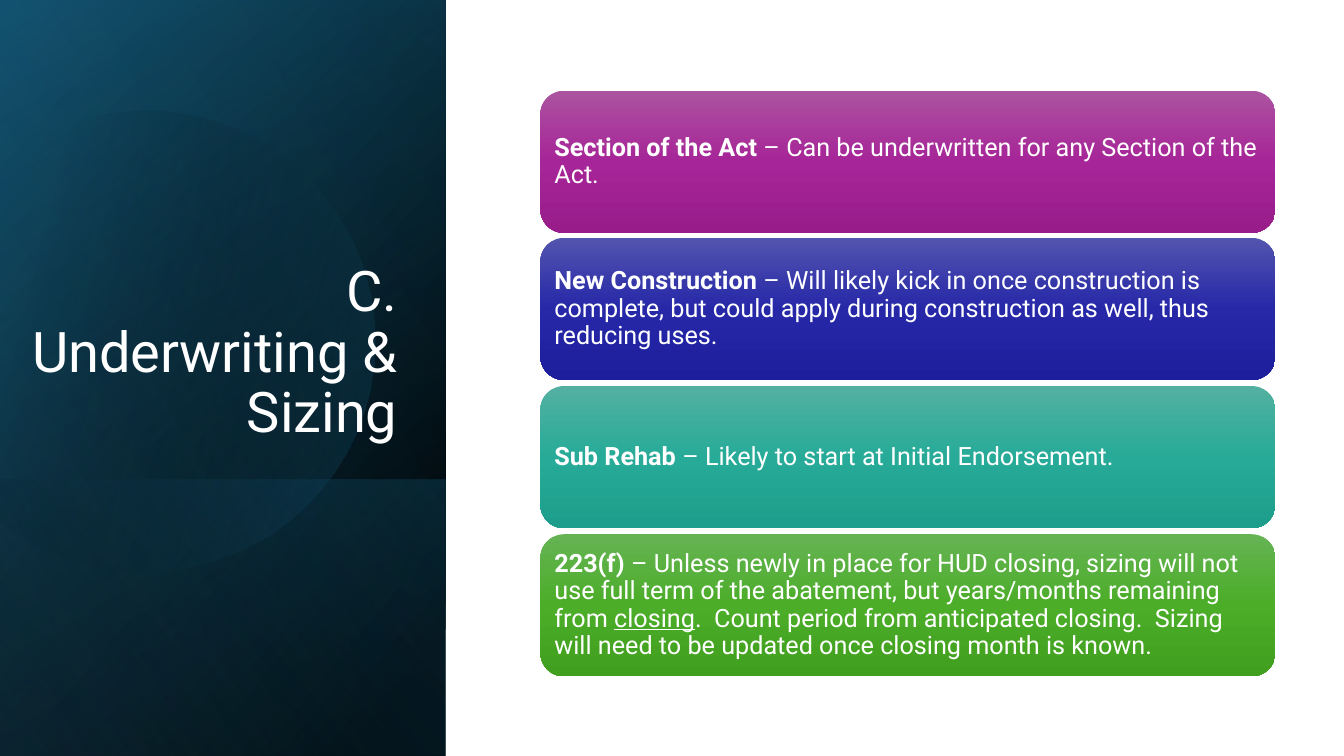
import math

from lxml import etree
from pptx import Presentation
from pptx.dml.color import RGBColor
from pptx.enum.shapes import MSO_SHAPE
from pptx.enum.text import MSO_ANCHOR, PP_ALIGN
from pptx.oxml.ns import qn
from pptx.util import Pt

RECTANGLE = MSO_SHAPE.RECTANGLE
ROUNDED = MSO_SHAPE.ROUNDED_RECTANGLE
LEFT, RIGHT = PP_ALIGN.LEFT, PP_ALIGN.RIGHT
MIDDLE, BOTTOM = MSO_ANCHOR.MIDDLE, MSO_ANCHOR.BOTTOM

EMU_PER_PX = 9144  # 100 px to the inch
FONT = "Roboto"
COLORS = {
    "white": "FFFFFF", "black": "000000", "teal": "156082",
    "deep teal": "104862", "sky": "46B1E1",
}


class SlideBuilder:
    def __init__(self, presentation):
        self.slide = presentation.slides.add_slide(presentation.slide_layouts[6])

    def px(self, *lengths):
        return [round(length * EMU_PER_PX) for length in lengths]

    def gradient(self, shape, stops, angle):
        """Fill a shape with (position %, hex color, opacity %) stops."""
        shape.shadow.inherit = False
        shape.line.fill.background()
        shape.fill.gradient()
        fill = shape._element.spPr.find(qn("a:gradFill"))
        stop_list = fill.find(qn("a:gsLst"))
        for old_stop in list(stop_list):
            stop_list.remove(old_stop)
        for position, color, opacity in stops:
            stop = etree.SubElement(stop_list, qn("a:gs"), pos=str(position * 1000))
            color_node = etree.SubElement(stop, qn("a:srgbClr"), val=color)
            if opacity < 100:
                etree.SubElement(color_node, qn("a:alpha"), val=str(opacity * 1000))
        fill.find(qn("a:lin")).set("ang", str(angle * 60000))

    def shape(self, kind, box, stops, angle):
        shape = self.slide.shapes.add_shape(kind, *self.px(*box))
        self.gradient(shape, stops, angle)
        return shape

    def panel(self, box, stops, angle):
        """A rectangle turned a quarter and mirrored."""
        shape = self.shape(RECTANGLE, box, stops, angle)
        shape.rotation = 90
        shape._element.spPr.find(qn("a:xfrm")).set("flipH", "1")

    def outline(self, points, center, rotation, stops, angle):
        """A closed outline whose points are given as seen after rotation."""
        turn = math.radians(-rotation)
        cosine, sine = math.cos(turn), math.sin(turn)
        unturned = []
        for x, y in points:
            dx, dy = x - center[0], y - center[1]
            unturned.append(self.px(center[0] + dx * cosine - dy * sine,
                                    center[1] + dx * sine + dy * cosine))
        builder = self.slide.shapes.build_freeform(*unturned[0])
        builder.add_line_segments(unturned[1:], close=True)
        shape = builder.convert_to_shape()
        self.gradient(shape, stops, angle)
        shape.rotation = rotation

    def add_text(self, shape, runs, size, align, anchor, insets):
        """Add (text, bold, underline) runs as one paragraph."""
        frame = shape.text_frame
        frame.word_wrap = True
        frame.vertical_anchor = anchor
        (frame.margin_left, frame.margin_top,
         frame.margin_right, frame.margin_bottom) = self.px(*insets)
        paragraph = frame.paragraphs[0]
        paragraph.alignment = align
        paragraph.line_spacing = 0.9
        for text, bold, underline in runs:
            run = paragraph.add_run()
            run.text = text
            run.font.name = FONT
            run.font.size = Pt(size)
            run.font.bold = bold
            run.font.underline = underline
            run.font.color.rgb = RGBColor.from_string(COLORS["white"])

    def title(self, text, box):
        shape = self.slide.shapes.add_textbox(*self.px(*box))
        self.add_text(shape, [(text, False, False)], 40, RIGHT, BOTTOM, (10, 5, 10, 5))

    def card(self, box, colors, runs):
        stops = [(i * 50, color, 100) for i, color in enumerate(colors)]
        shape = self.shape(ROUNDED, box, stops, 90)
        self.add_text(shape, runs, 18, LEFT, MIDDLE, (7, 7, 7, 7))


def curve(start, control_1, control_2, end, steps=16):
    """Points along a cubic curve, without its start."""
    points = []
    for step in range(1, steps + 1):
        t = step / steps
        weights = ((1 - t) ** 3, 3 * t * (1 - t) ** 2, 3 * t * t * (1 - t), t ** 3)
        points.append(tuple(
            sum(w * value for w, value in zip(weights, values))
            for values in zip(start, control_1, control_2, end)))
    return points


def disc_points():
    """A disc cut off by a straight edge on its left."""
    points = [(149, 110)]
    for controls in [((246, 112), (335, 177), (363, 275)),
                     ((398, 397), (328, 523), (207, 558)),
                     ((131, 580), (53, 561), (-3, 514))]:
        points += curve(points[-1], *controls)
    points += [(-15, 503), (-15, 175), (0, 161)]
    for controls in [((23, 142), (50, 128), (80, 119)),
                     ((103, 113), (126, 110), (149, 110))]:
        points += curve(points[-1], *controls)
    return points


CARDS = [
    (("AC53A0", "A62598", "991C8B"),
     [("Section of the Act", True, False),
      (" – Can be underwritten for any Section of the Act.", False, False)]),
    (("5354AE", "2628A8", "1D1E9B"),
     [("New Construction ", True, False),
      ("– Will likely kick in once construction is complete, but could apply "
       "during construction as well, thus reducing uses.", False, False)]),
    (("53B0A1", "27AB98", "1D9D8B"),
     [("Sub Rehab ", True, False),
      ("– Likely to start at Initial Endorsement.", False, False)]),
    (("66B354", "4BAD28", "409F1E"),
     [("223(f) ", True, False),
      ("– Unless newly in place for HUD closing, sizing will not use full term "
       "of the abatement, but years/months remaining from ", False, False),
      ("closing", False, True),
      (".  Count period from anticipated closing.  Sizing will need to be "
       "updated once closing month is known.", False, False)]),
]


def main():
    presentation = Presentation()
    presentation.slide_width = 1333 * EMU_PER_PX
    presentation.slide_height = 750 * EMU_PER_PX
    builder = SlideBuilder(presentation)
    black, teal = COLORS["black"], COLORS["teal"]

    # Layered side panel
    full_panel = (-154, 154, 750, 442)
    builder.panel(full_panel, [(8, black, 100), (100, COLORS["deep teal"], 100)], 50)
    builder.panel(full_panel, [(0, black, 0), (99, teal, 46)], 30)
    builder.panel((84, 392, 274, 442), [(2, teal, 29), (100, black, 30)], 130)
    builder.outline(disc_points(), (158, 334), 343.9,
                    [(29, black, 0), (100, teal, 43)], 30)
    builder.panel(full_panel, [(0, black, 0), (99, COLORS["sky"], 11)], 120)

    # Title
    builder.title("C. Underwriting & Sizing", (19, 184, 385, 262))

    # Cards, evenly spread from 90 to 530 px
    for index, (colors, runs) in enumerate(CARDS):
        top = 90 + index * 440 // 3
        builder.card((536, top, 729, 141), colors, runs)

    presentation.save("out.pptx")


if __name__ == "__main__":
    main()
